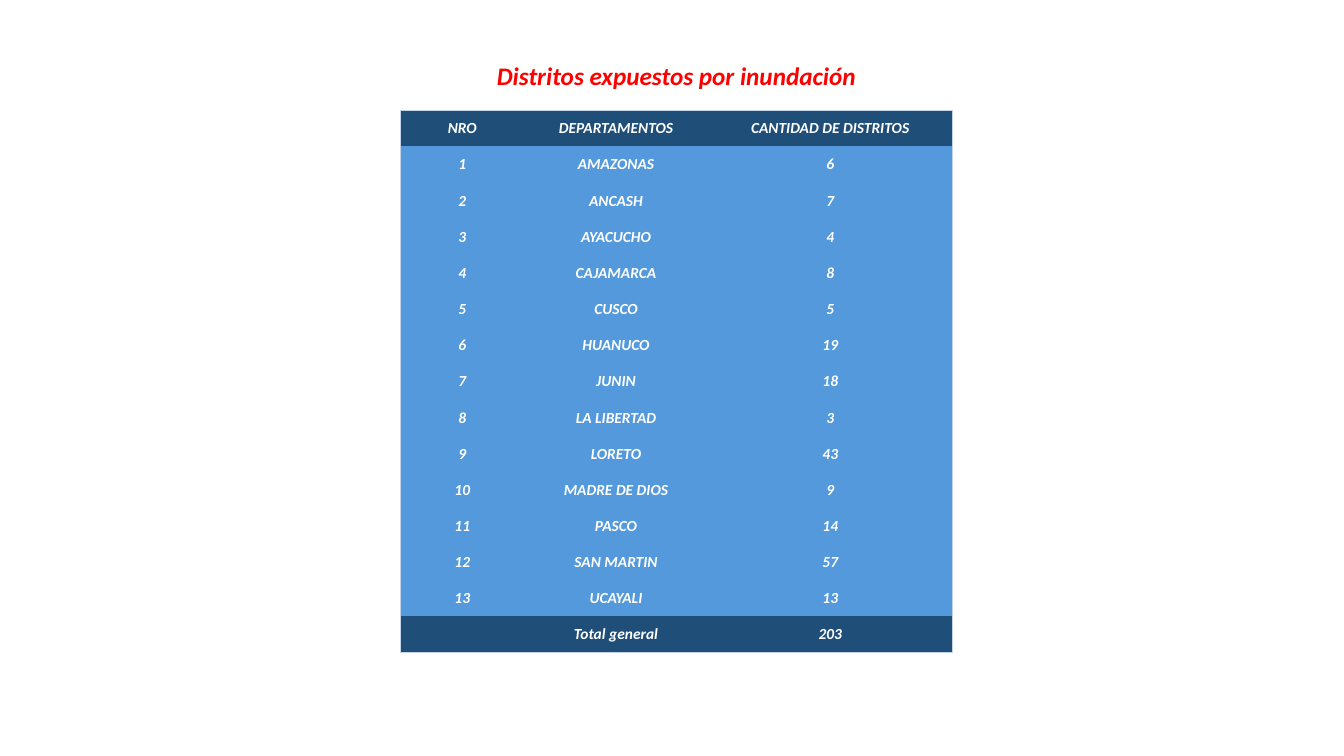
from lxml import etree
from pptx import Presentation
from pptx.dml.color import RGBColor
from pptx.enum.text import MSO_ANCHOR, PP_ALIGN
from pptx.oxml.ns import qn
from pptx.util import Inches, Pt

CENTER = PP_ALIGN.CENTER
MIDDLE = MSO_ANCHOR.MIDDLE
RED = RGBColor(0xFF, 0x00, 0x00)
WHITE = RGBColor(0xFF, 0xFF, 0xFF)
NAVY = RGBColor(0x1F, 0x4E, 0x79)
BLUE = RGBColor(0x53, 0x99, 0xDB)
PALE = RGBColor(0xC4, 0xD5, 0xEB)

TITLE = "Distritos expuestos por inundación"
HEAD = ("NRO", "DEPARTAMENTOS", "CANTIDAD DE DISTRITOS")
COUNTS = (
    ("AMAZONAS", 6),
    ("ANCASH", 7),
    ("AYACUCHO", 4),
    ("CAJAMARCA", 8),
    ("CUSCO", 5),
    ("HUANUCO", 19),
    ("JUNIN", 18),
    ("LA LIBERTAD", 3),
    ("LORETO", 43),
    ("MADRE DE DIOS", 9),
    ("PASCO", 14),
    ("SAN MARTIN", 57),
    ("UCAYALI", 13),
)
TOTAL = ("", "Total general", 203)
WIDTHS = (1.23, 1.82, 2.43)


def write(frame, text, size=11, color=WHITE):
    para = frame.paragraphs[0]
    para.alignment = CENTER
    run = para.add_run()
    run.text = str(text)
    font = run.font
    font.name = "Calibri"
    font.size = Pt(size)
    font.bold = font.italic = True
    font.color.rgb = color


def border(cell, edges):
    props = cell._tc.get_or_add_tcPr()
    for spot, (side, shown) in enumerate(edges.items()):
        line = etree.Element(qn("a:ln" + side), w=str(Pt(0.5)))
        if shown:
            fill = etree.SubElement(line, qn("a:solidFill"))
            etree.SubElement(fill, qn("a:srgbClr"), val=str(PALE))
        else:
            etree.SubElement(line, qn("a:noFill"))
        props.insert(spot, line)


def add_title(slide, left, top, width, height):
    box = slide.shapes.add_textbox(*map(Inches, (left, top, width, height)))
    box.text_frame.word_wrap = False
    write(box.text_frame, TITLE, size=18, color=RED)


def add_grid(slide, left, top, width, height):
    body = [(i, *row) for i, row in enumerate(COUNTS, 1)]
    rows = [HEAD, *body, TOTAL]
    last, end = len(rows) - 1, len(WIDTHS) - 1
    frame = slide.shapes.add_table(
        len(rows), len(WIDTHS), *map(Inches, (left, top, width, height)))
    table = frame.table
    table.horz_banding = False
    for col, share in zip(table.columns, WIDTHS):
        col.width = Inches(width * share / sum(WIDTHS))
    for r, row in enumerate(rows):
        for c, text in enumerate(row):
            cell = table.cell(r, c)
            cell.vertical_anchor = MIDDLE
            cell.margin_left = cell.margin_right = Inches(0.01)
            cell.margin_top = Inches(0.01)
            cell.margin_bottom = 0
            cell.fill.solid()
            cell.fill.fore_color.rgb = NAVY if r in (0, last) else BLUE
            border(cell, {"L": c == 0, "R": c == end,
                          "T": r == 0, "B": r == last})
            if text != "":
                write(cell.text_frame, text)


def main():
    deck = Presentation()
    deck.slide_width = Inches(13.33)
    deck.slide_height = Inches(7.5)
    slide = deck.slides.add_slide(deck.slide_layouts[6])
    add_title(slide, 4.81, 0.55, 3.8, 0.4)
    add_grid(slide, 3.97, 1.09, 5.48, 5.38)
    deck.save("out.pptx")


if __name__ == "__main__":
    main()
